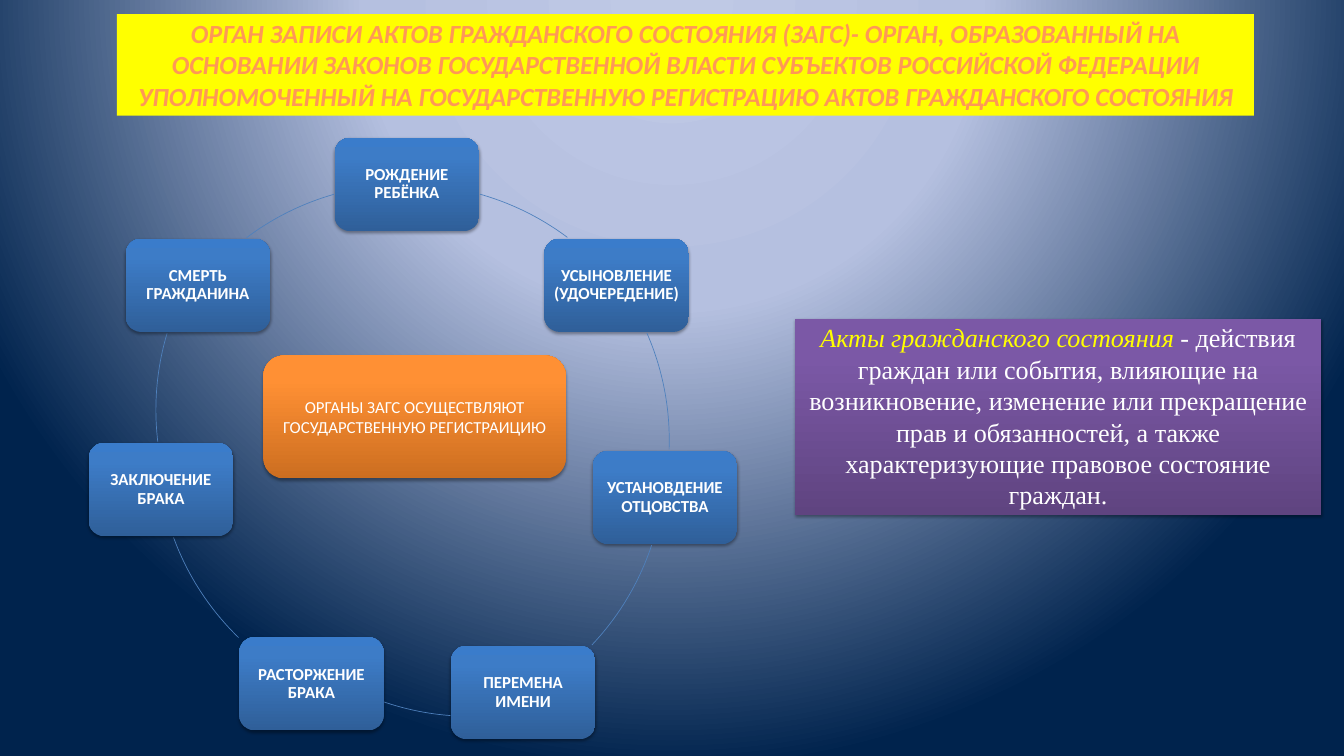
from dataclasses import dataclass

from pptx import Presentation
from pptx.dml.color import RGBColor
from pptx.enum.shapes import MSO_SHAPE
from pptx.enum.text import MSO_ANCHOR, MSO_AUTO_SIZE, PP_ALIGN
from pptx.oxml import parse_xml
from pptx.oxml.ns import nsdecls
from pptx.util import Pt

RECT, ROUND, ARC = MSO_SHAPE.RECTANGLE, MSO_SHAPE.ROUNDED_RECTANGLE, MSO_SHAPE.ARC
TOP, MIDDLE = MSO_ANCHOR.TOP, MSO_ANCHOR.MIDDLE
CENTER, GROW = PP_ALIGN.CENTER, MSO_AUTO_SIZE.SHAPE_TO_FIT_TEXT

PX = 9144  # 100 px to the inch
NODE_W, NODE_H, RING = 215, 139, 796

SKY = [(0, "BFC9E5"), (40, "B5C0E0"), (100, "00234D")]
BLUE = [(0, "2F5F99"), (80, "3D7CC7"), (100, "3A7CCB")]
ORANGE = [(0, "CC6E20"), (80, "FF9034"), (100, "FF9136")]
PURPLE = [(0, "5F4480"), (80, "7B58A6"), (100, "7C57A8")]
GLOW = ('<a:path path="circle"><a:fillToRect l="50000" t="-80000" '
        'r="50000" b="180000"/></a:path>')
RISE = '<a:lin ang="16200000" scaled="0"/>'


@dataclass
class Node:
    """A civil act, and the arc that leads on to the next one."""
    label: str
    x: int
    y: int
    ring_x: int
    ring_y: int
    start: float  # degrees, clockwise from the right
    end: float


NODES = [
    Node("РОЖДЕНИЕ РЕБЁНКА", 498, 205, 208, 274, 285.8, 306.8),
    Node("УСЫНОВЛЕНИЕ (УДОЧЕРЕДЕНИЕ)", 810, 355, 200, 257, 336.4, 2),
    Node("УСТАНОВДЕНИЕ ОТЦОВСТВА", 882, 671, 194, 288, 18.4, 43.5),
    Node("ПЕРЕМЕНА ИМЕНИ", 671, 961, 302, 270, 94.3, 108.9),
    Node("РАСТОРЖЕНИЕ БРАКА", 356, 948, 234, 265, 134.1, 159.9),
    Node("ЗАКЛЮЧЕНИЕ БРАКА", 132, 659, 232, 212, 173.2, 196.7),
    Node("СМЕРТЬ ГРАЖДАНИНА", 187, 355, 208, 274, 233.1, 254.1),
]


def color(code: str) -> RGBColor:
    return RGBColor.from_string(code)


def blend(fill, root, stops: list, way: str) -> None:
    """Give a fill any number of gradient stops."""
    fill.gradient()
    old = root.xpath(".//a:gradFill")[0]
    marks = "".join(
        f'<a:gs pos="{pos * 1000}"><a:srgbClr val="{code}"/></a:gs>'
        for pos, code in stops)
    old.getparent().replace(old, parse_xml(
        f'<a:gradFill {nsdecls("a")} rotWithShape="1">'
        f'<a:gsLst>{marks}</a:gsLst>{way}</a:gradFill>'))


def place(shape, x: int, y: int, w: int, h: int) -> None:
    shape.left, shape.top, shape.width, shape.height = (
        v * PX for v in (x, y, w, h))


def write(shape, *parts: tuple, size: int = 18, face: str = "Calibri",
          bold: bool = False, anchor=MIDDLE, inset: int = 0,
          spacing: float = 1.0, grow: bool = False) -> None:
    """Write parts of (text, colour, italic) as one centred paragraph."""
    frame = shape.text_frame
    frame.word_wrap = True
    frame.vertical_anchor = anchor
    if grow:
        frame.auto_size = GROW
    if inset:
        frame.margin_left = frame.margin_right = inset * PX
        frame.margin_top = frame.margin_bottom = inset * PX
    para = frame.paragraphs[0]
    para.alignment = CENTER
    para.line_spacing = spacing
    for text, code, italic in parts:
        run = para.add_run()
        run.text = text
        font = run.font
        font.name, font.size = face, Pt(size)
        font.bold, font.italic = bold, italic
        font.color.rgb = color(code)


def card(slide, kind, box: tuple, stops: list):
    """Add a gradient box with a soft shadow below it."""
    shape = slide.shapes.add_shape(kind, 0, 0, 0, 0)
    place(shape, *box)
    blend(shape.fill, shape.element, stops, RISE)
    shape.line.fill.background()
    shape.shadow.inherit = False
    shape.element.xpath(".//a:effectLst")[0].append(parse_xml(
        f'<a:outerShdw {nsdecls("a")} blurRad="40000" dist="23000" '
        'dir="5400000" rotWithShape="0"><a:srgbClr val="000000">'
        '<a:alpha val="35000"/></a:srgbClr></a:outerShdw>'))
    return shape


def arc(slide, node: Node) -> None:
    shape = slide.shapes.add_shape(ARC, 0, 0, 0, 0)
    place(shape, node.ring_x, node.ring_y, RING, RING)
    # Angles are stored in 60000ths, adjustments in 100000ths
    shape.adjustments[0] = node.start * 0.6
    shape.adjustments[1] = node.end * 0.6
    shape.fill.background()
    shape.line.color.rgb = color("4F81BD")
    shape.line.width = Pt(0.75)
    shape.shadow.inherit = False


def main() -> None:
    deck = Presentation()
    deck.slide_width, deck.slide_height = 2000 * PX, 1125 * PX
    slide = deck.slides.add_slide(deck.slide_layouts[5])
    blend(slide.background.fill, slide.element, SKY, GLOW)

    # Heading
    title = slide.shapes.title
    place(title, 174, 21, 1692, 151)
    title.fill.solid()
    title.fill.fore_color.rgb = color("FFFF00")
    write(title, (
        "ОРГАН ЗАПИСИ АКТОВ ГРАЖДАНСКОГО СОСТОЯНИЯ (ЗАГС)- ОРГАН, "
        "ОБРАЗОВАННЫЙ НА ОСНОВАНИИ ЗАКОНОВ ГОСУДАРСТВЕННОЙ ВЛАСТИ СУБЪЕКТОВ "
        "РОССИЙСКОЙ ФЕДЕРАЦИИ УПОЛНОМОЧЕННЫЙ НА ГОСУДАРСТВЕННУЮ РЕГИСТРАЦИЮ "
        "АКТОВ ГРАЖДАНСКОГО СОСТОЯНИЯ", "FF9856", True),
        size=28, bold=True, anchor=TOP, grow=True)

    # Cycle of civil acts
    for node in NODES:
        shape = card(slide, ROUND, (node.x, node.y, NODE_W, NODE_H), BLUE)
        write(shape, (node.label, "FFFFFF", False),
              bold=True, inset=7, spacing=0.9)
        arc(slide, node)

    # Centre of the cycle
    hub = card(slide, ROUND, (392, 529, 450, 183), ORANGE)
    write(hub, ("ОРГАНЫ ЗАГС ОСУЩЕСТВЛЯЮТ ГОСУДАРСТВЕННУЮ РЕГИСТРАИЦИЮ",
                "FFFFFF", False))

    # Definition
    panel = card(slide, RECT, (1183, 474, 783, 293), PURPLE)
    write(panel, ("Акты гражданского состояния ", "FFFF00", True), (
        "- действия граждан или события, влияющие на возникновение, "
        "изменение или прекращение прав и обязанностей, а также "
        "характеризующие правовое состояние граждан.", "FFFFFF", False),
        size=28, face="Times New Roman", anchor=TOP, grow=True)

    deck.save("out.pptx")


if __name__ == "__main__":
    main()
